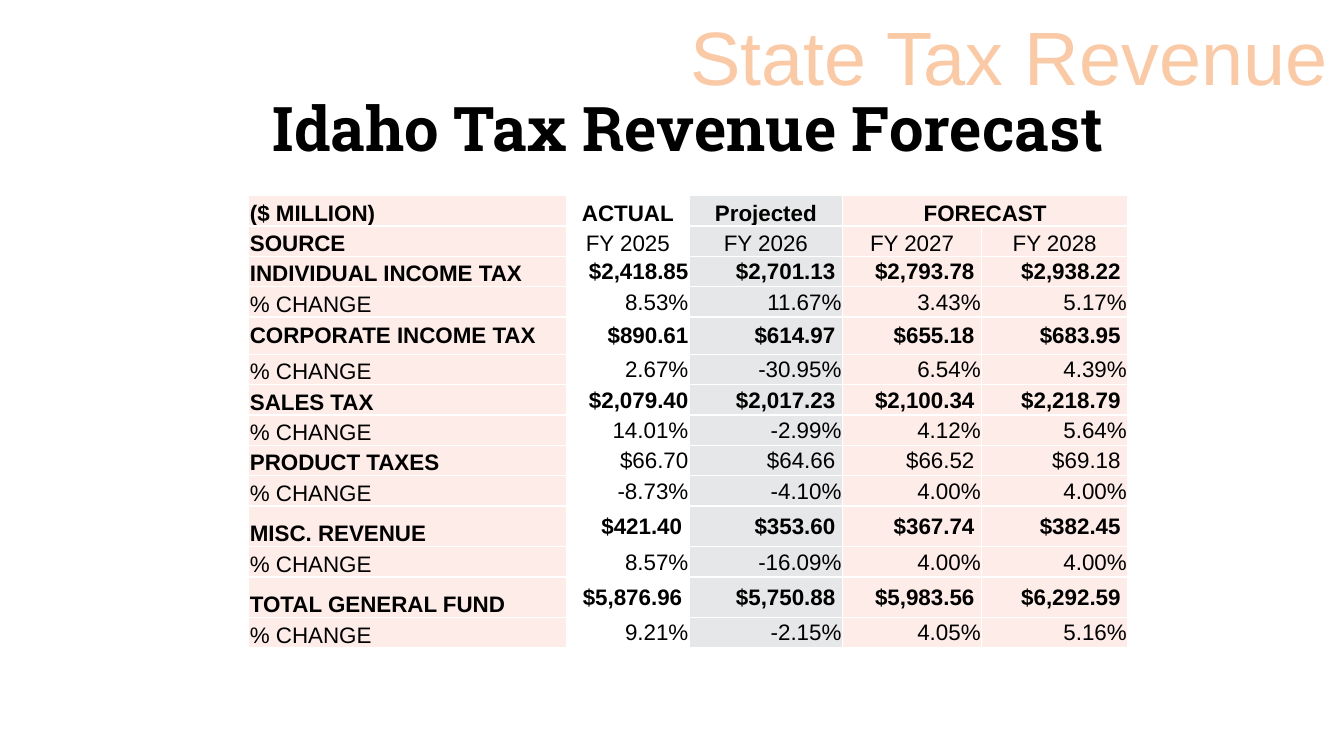
from pptx import Presentation
from pptx.dml.color import RGBColor
from pptx.enum.text import MSO_ANCHOR, PP_ALIGN
from pptx.oxml import parse_xml
from pptx.oxml.ns import nsdecls
from pptx.util import Pt

WHITE, PINK, GREY, PEACH, BLACK = "FFFFFF", "FDECE8", "E6E7E8", "FAC9A6", "000000"
COLUMN_FILLS = [PINK, WHITE, GREY, PINK, PINK]
COLUMN_WIDTHS = [226.8, 87.8, 109.4, 99.4, 104.4]
ROW_HEIGHT = 21.7
TALL_ROWS = {4: 26.6, 10: 29, 12: 29}
CHANGE = "% CHANGE"
CORPORATE = "CORPORATE INCOME TAX"
PRODUCT = "PRODUCT TAXES"
REVENUE = [
    ["($ MILLION)", "ACTUAL", "Projected", "FORECAST", ""],
    ["SOURCE", "FY 2025", "FY 2026", "FY 2027", "FY 2028"],
    ["INDIVIDUAL INCOME TAX", "$2,418.85", "$2,701.13 ", "$2,793.78 ", "$2,938.22 "],
    [CHANGE, "8.53%", "11.67%", "3.43%", "5.17%"],
    [CORPORATE, "$890.61", "$614.97 ", "$655.18 ", "$683.95 "],
    [CHANGE, "2.67%", "-30.95%", "6.54%", "4.39%"],
    ["SALES TAX", "$2,079.40", "$2,017.23 ", "$2,100.34 ", "$2,218.79 "],
    [CHANGE, "14.01%", "-2.99%", "4.12%", "5.64%"],
    [PRODUCT, "$66.70", "$64.66 ", "$66.52 ", "$69.18 "],
    [CHANGE, "-8.73%", "-4.10%", "4.00%", "4.00%"],
    ["MISC. REVENUE", "$421.40 ", "$353.60 ", "$367.74 ", "$382.45 "],
    [CHANGE, "8.57%", "-16.09%", "4.00%", "4.00%"],
    ["TOTAL GENERAL FUND", "$5,876.96 ", "$5,750.88 ", "$5,983.56 ", "$6,292.59 "],
    [CHANGE, "9.21%", "-2.15%", "4.05%", "5.16%"],
]


def color(value):
    return RGBColor.from_string(value)


def style_text(para, size, fill, align, name="Arial", bold=False):
    para.alignment = align
    for span in para.runs:
        span.font.name = name
        span.font.size = Pt(size)
        span.font.bold = bold
        span.font.color.rgb = color(fill)


def add_text(page, text, left, top, width, height, anchor, wrap):
    box = page.shapes.add_textbox(Pt(left), Pt(top), Pt(width), Pt(height))
    frame = box.text_frame
    frame.word_wrap = wrap
    frame.vertical_anchor = anchor
    frame.text = text
    return frame.paragraphs[0]


def add_borders(cell):
    properties = cell._tc.get_or_add_tcPr()
    for side in ("lnL", "lnR", "lnT", "lnB"):
        properties.append(parse_xml(
            f'<a:{side} {nsdecls("a")} w="{Pt(1)}"><a:solidFill>'
            f'<a:srgbClr val="{WHITE}"/></a:solidFill></a:{side}>'))


def fill_cell(cell, text, row, column):
    label = REVENUE[row][0]
    header = row < 2
    add_borders(cell)
    cell.fill.solid()
    cell.fill.fore_color.rgb = color(COLUMN_FILLS[column])
    cell.margin_left = cell.margin_right = cell.margin_top = Pt(0.72)
    cell.margin_bottom = Pt(0)
    at_bottom = header or (column == 0 and label != CORPORATE)
    cell.vertical_anchor = MSO_ANCHOR.BOTTOM if at_bottom else MSO_ANCHOR.MIDDLE
    cell.text = text
    if column == 0:
        align = PP_ALIGN.LEFT
    else:
        align = PP_ALIGN.CENTER if header else PP_ALIGN.RIGHT
    bold = label != CHANGE and (column == 0 or label not in ("SOURCE", PRODUCT))
    style_text(cell.text_frame.paragraphs[0], 16, BLACK, align, bold=bold)


def add_revenue_table(page):
    heights = [TALL_ROWS.get(row, ROW_HEIGHT) for row in range(len(REVENUE))]
    frame = page.shapes.add_table(
        len(REVENUE), len(COLUMN_WIDTHS), Pt(177.8), Pt(139.7),
        Pt(sum(COLUMN_WIDTHS)), Pt(sum(heights)))
    table = frame.table
    for column, width in zip(table.columns, COLUMN_WIDTHS):
        column.width = Pt(width)
    for row, height in zip(table.rows, heights):
        row.height = Pt(height)
    for row, values in enumerate(REVENUE):
        for column, text in enumerate(values):
            fill_cell(table.cell(row, column), text, row, column)
    table.cell(0, 3).merge(table.cell(0, 4))


def main():
    deck = Presentation()
    deck.slide_width, deck.slide_height = Pt(960), Pt(540)
    page = deck.slides.add_slide(deck.slide_layouts[6])
    title = add_text(page, "Idaho Tax Revenue Forecast", 77.8, 67, 828, 54,
                     MSO_ANCHOR.MIDDLE, True)
    title.line_spacing = 0.9
    style_text(title, 44, BLACK, PP_ALIGN.CENTER, "Roboto Slab", True)
    section = add_text(page, "State Tax Revenue", 480.2, 2.9, 481, 72.7,
                       MSO_ANCHOR.BOTTOM, False)
    style_text(section, 54, PEACH, PP_ALIGN.CENTER)
    add_revenue_table(page)
    deck.save("out.pptx")


if __name__ == "__main__":
    main()
